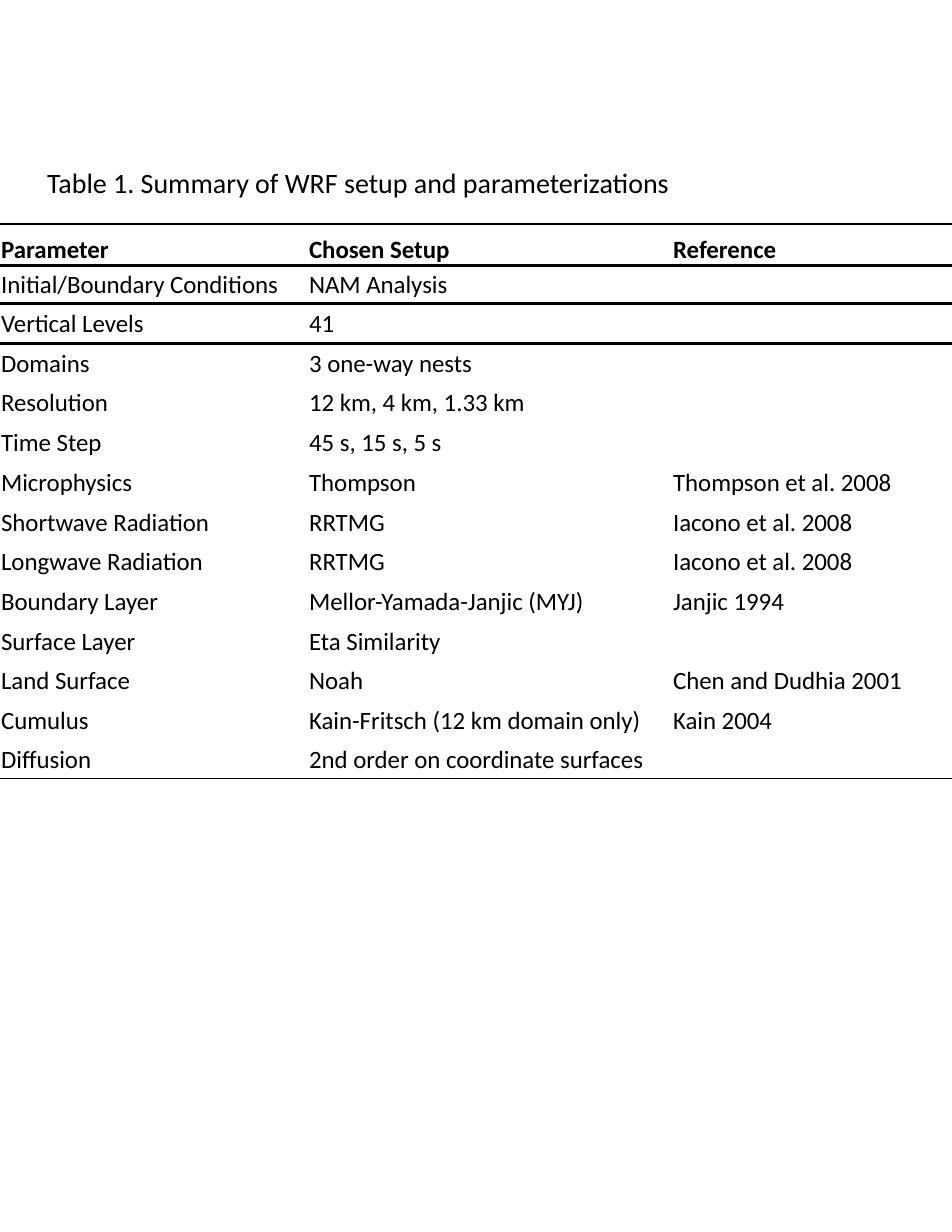
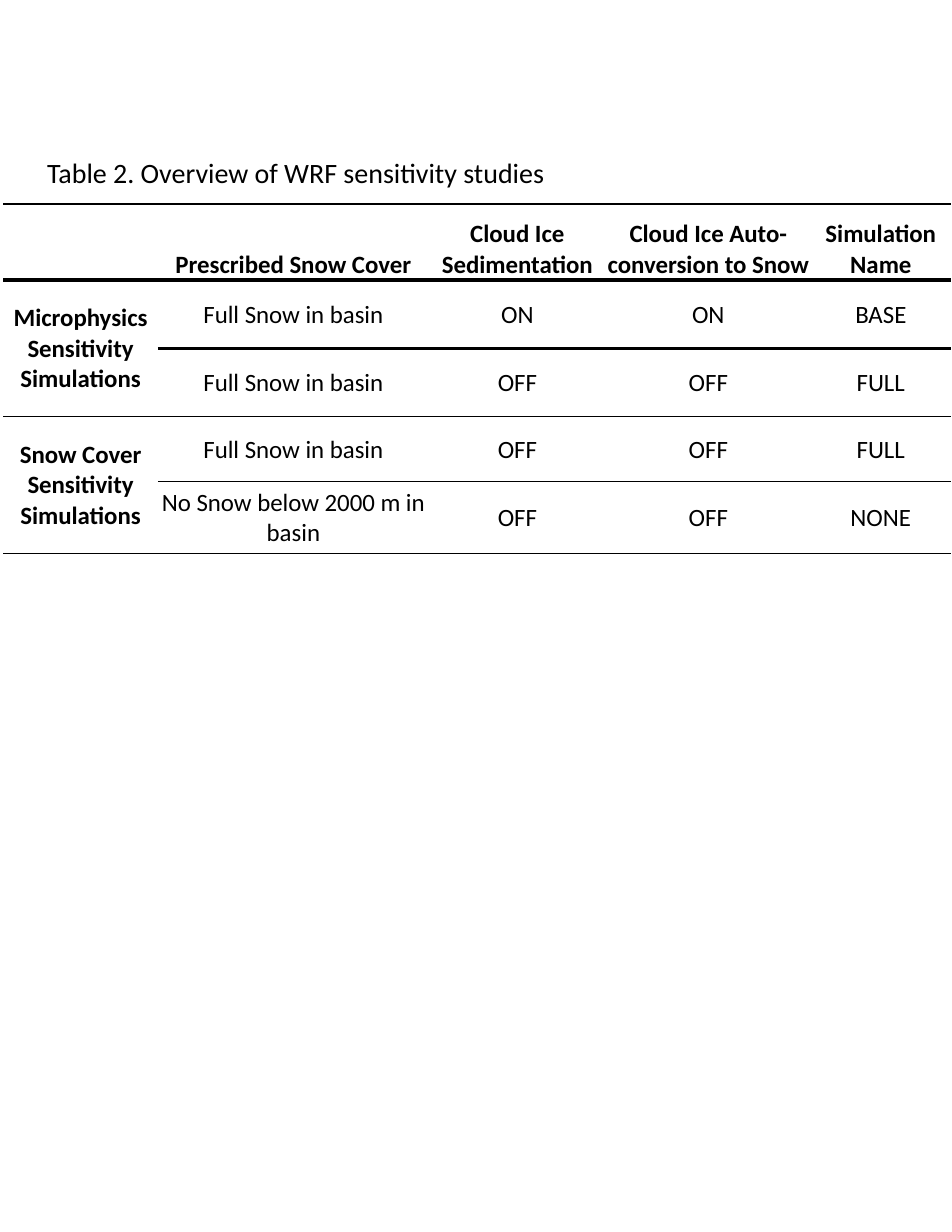
from lxml.etree import SubElement
from pptx import Presentation
from pptx.dml.color import RGBColor
from pptx.enum.text import MSO_ANCHOR as Anchor, MSO_AUTO_SIZE as AutoSize, PP_ALIGN as Align
from pptx.oxml.ns import qn
from pptx.util import Emu, Pt

SCALE = 4572
COLORS = {"ink": "000000"}
NO_GRID_STYLE = "{2D5ABB26-0587-4C30-8999-92F81FD0307C}"
THIN, THICK = 1, 2.25
CAPTION_FRAME = {"margin_left": 22, "margin_right": 22, "margin_top": 12, "margin_bottom": 12}
CELL_FRAME = {"margin_left": 2, "margin_right": 2, "margin_top": 2, "margin_bottom": 0}

SETUP_ROWS = [
    ("Parameter", "Chosen Setup", "Reference"),
    ("Initial/Boundary Conditions", "NAM Analysis", ""),
    ("Vertical Levels", "41", ""),
    ("Domains", "3 one-way nests", ""),
    ("Resolution", "12 km, 4 km, 1.33 km", ""),
    ("Time Step", "45 s, 15 s, 5 s", ""),
    ("Microphysics", "Thompson", "Thompson et al. 2008"),
    ("Shortwave Radiation", "RRTMG", "Iacono et al. 2008"),
    ("Longwave Radiation", "RRTMG", "Iacono et al. 2008"),
    ("Boundary Layer", "Mellor-Yamada-Janjic (MYJ)", "Janjic 1994"),
    ("Surface Layer", "Eta Similarity", ""),
    ("Land Surface", "Noah", "Chen and Dudhia 2001"),
    ("Cumulus", "Kain-Fritsch (12 km domain only)", "Kain 2004"),
    ("Diffusion", "2nd order on coordinate surfaces", ""),
]

STUDY_ROWS = [
    ("", "Prescribed Snow Cover", "Cloud Ice Sedimentation",
     "Cloud Ice Auto-conversion to Snow", "Simulation Name"),
    ("Microphysics Sensitivity Simulations", "Full Snow in basin", "ON", "ON", "BASE"),
    ("", "Full Snow in basin", "OFF", "OFF", "FULL"),
    ("Snow Cover Sensitivity Simulations", "Full Snow in basin", "OFF", "OFF", "FULL"),
    ("", "No Snow below 2000 m in basin", "OFF", "OFF", "NONE"),
]


def px(length):
    return Emu(length * SCALE)


def apply(target, values):
    for name, value in values.items():
        setattr(target, name, value)


class Deck:
    def __init__(self, width, height, font="Calibri"):
        self.prs = Presentation()
        apply(self.prs, {"slide_width": px(width), "slide_height": px(height)})
        self.font = font
        self.slide = None

    def new_slide(self):
        self.slide = self.prs.slides.add_slide(self.prs.slide_layouts[6])

    def put_text(self, frame, text, size, bold=False, align=Align.LEFT):
        paragraph = frame.paragraphs[0]
        paragraph.alignment = align
        run = paragraph.add_run()
        run.text = text
        apply(run.font, {"name": self.font, "size": Pt(size), "bold": bold})
        run.font.color.rgb = RGBColor.from_string(COLORS["ink"])

    def caption(self, top, text):
        frame = self.slide.shapes.add_textbox(px(62), px(top), px(1704), px(84)).text_frame
        apply(frame, {name: px(inset) for name, inset in CAPTION_FRAME.items()})
        apply(frame, {"word_wrap": True, "auto_size": AutoSize.SHAPE_TO_FIT_TEXT})
        self.put_text(frame, text, 18)

    def table(self, left, top, widths, heights, rows, rules, align=Align.LEFT, groups=()):
        table = self.slide.shapes.add_table(
            len(rows), len(widths), px(left), px(top), px(sum(widths)), px(sum(heights))).table
        table._tbl.tblPr.find(qn("a:tableStyleId")).text = NO_GRID_STYLE
        apply(table, {"first_row": False, "horz_banding": False})
        for column, width in zip(table.columns, widths):
            column.width = px(width)
        for row, height in zip(table.rows, heights):
            row.height = px(height)
        for first in groups:
            table.cell(first, 0).merge(table.cell(first + 1, 0))
        for r, texts in enumerate(rows):
            for c, text in enumerate(texts):
                cell = table.cell(r, c)
                apply(cell, {name: px(inset) for name, inset in CELL_FRAME.items()})
                cell.vertical_anchor = Anchor.MIDDLE if r else Anchor.BOTTOM
                if text:
                    bold = r == 0 or (c == 0 and r in groups)
                    self.put_text(cell.text_frame, text, 16, bold, align)
        for edge, (weight, first_column) in rules.items():
            for c in range(first_column, len(widths)):
                if edge < len(rows):
                    self.rule(table.cell(edge, c), "a:lnT", weight)
                if edge:
                    above = table.cell(edge - 1, c)
                    self.rule(table.cell(edge - 2, c) if above.is_spanned else above, "a:lnB", weight)
        for cell in table.iter_cells():
            cell.fill.background()

    def rule(self, cell, side, weight):
        line = SubElement(cell._tc.get_or_add_tcPr(), qn(side), w=str(int(Pt(weight))))
        fill = SubElement(line, qn("a:solidFill"))
        SubElement(fill, qn("a:srgbClr"), val=COLORS["ink"])


def main():
    deck = Deck(1700, 2200)

    deck.new_slide()
    deck.caption(284, "Table 1. Summary of WRF setup and parameterizations")
    deck.table(0, 400, [550, 650, 500], [74, 68] + [71] * 11 + [68], SETUP_ROWS,
               {0: (THIN, 0), 1: (THICK, 0), 2: (THICK, 0), 14: (THIN, 0)})

    deck.new_slide()
    deck.caption(266, "Table 2. Overview of WRF sensitivity studies")
    deck.table(6, 364, [276, 484, 316, 366, 250], [136, 122, 122, 116, 128], STUDY_ROWS,
               {0: (THIN, 0), 1: (THICK, 0), 2: (THICK, 1), 3: (THIN, 0), 4: (THIN, 1), 5: (THIN, 0)},
               Align.CENTER, groups=(1, 3))

    deck.prs.save("out.pptx")


if __name__ == "__main__":
    main()
